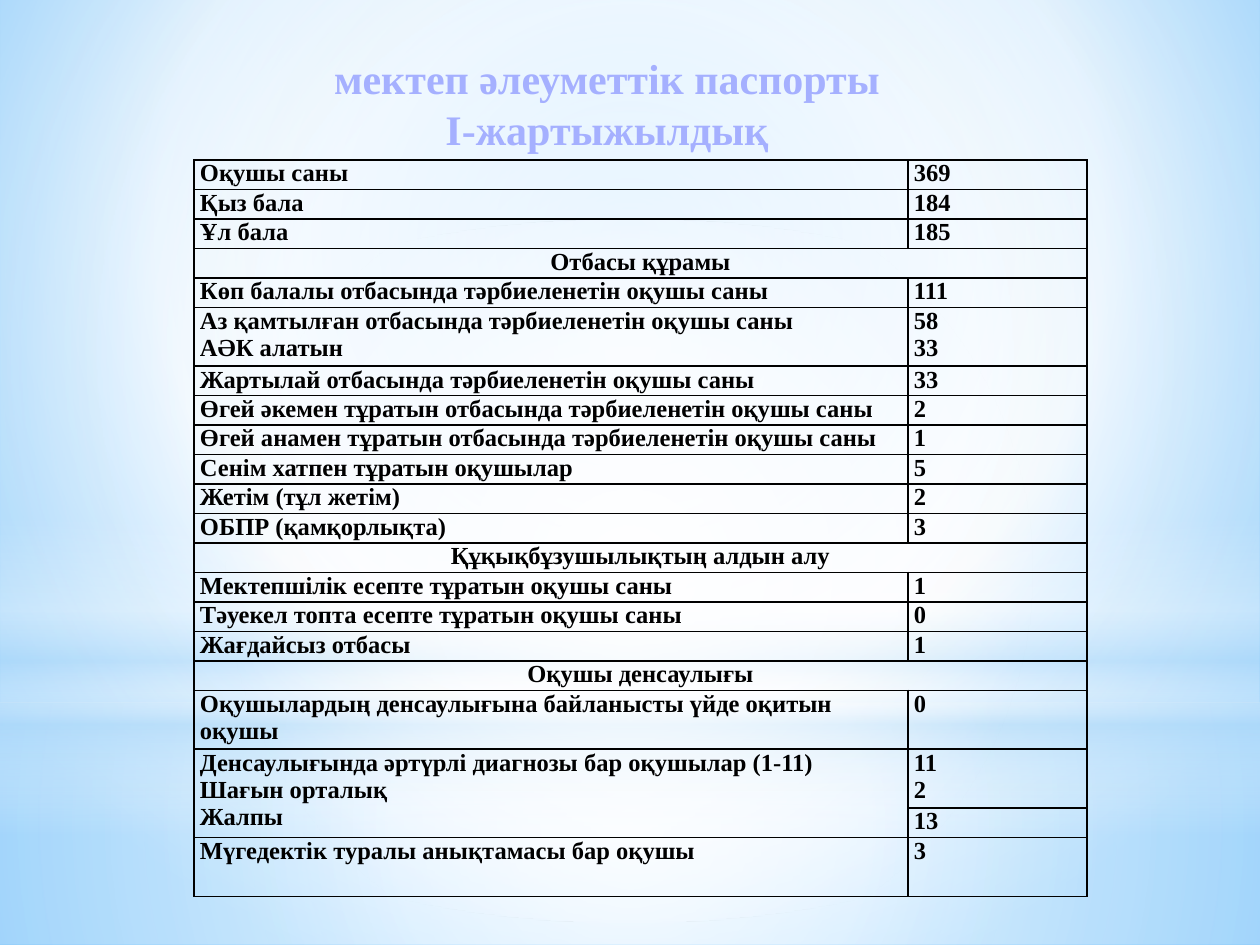
from lxml.etree import SubElement
from pptx import Presentation
from pptx.dml.color import RGBColor
from pptx.enum.shapes import MSO_SHAPE as Shape
from pptx.enum.text import MSO_ANCHOR as Anchor, PP_ALIGN as Align
from pptx.oxml import parse_xml
from pptx.oxml.ns import nsdecls, qn
from pptx.util import Pt

PX = 914400 // 126
FONT = "Times New Roman"
BLACK = RGBColor(0x00, 0x00, 0x00)
WHITE = RGBColor(0xFF, 0xFF, 0xFF)
LILAC = RGBColor(0xA5, 0xB0, 0xFF)
SKY = RGBColor(0x9E, 0xD5, 0xFF)
BLUE = RGBColor(0x5B, 0xB9, 0xFF)
PALE = RGBColor(0xB4, 0xDC, 0xFA)

TITLE = ["мектеп әлеуметтік паспорты", "І-жартыжылдық"]

# Label, value, height in lines. A heading has no value; no label continues the one above.
ROWS = [
    ("Оқушы саны", "369", 1),
    ("Қыз бала", "184", 1),
    ("Ұл бала", "185", 1),
    ("Отбасы құрамы", None, 1),
    ("Көп балалы отбасында тәрбиеленетін оқушы саны", "111", 1),
    ("Аз қамтылған отбасында тәрбиеленетін оқушы саны\nАӘК алатын", "58\n33", 2),
    ("Жартылай отбасында тәрбиеленетін оқушы саны", "33", 1),
    ("Өгей әкемен тұратын отбасында тәрбиеленетін оқушы саны", "2", 1),
    ("Өгей анамен тұратын отбасында тәрбиеленетін оқушы саны", "1", 1),
    ("Сенім хатпен тұратын оқушылар", "5", 1),
    ("Жетім (тұл жетім)", "2", 1),
    ("ОБПР (қамқорлықта)", "3", 1),
    ("Құқықбұзушылықтың алдын алу", None, 1),
    ("Мектепшілік есепте тұратын оқушы саны", "1", 1),
    ("Тәуекел топта есепте тұратын оқушы саны", "0", 1),
    ("Жағдайсыз отбасы", "1", 1),
    ("Оқушы денсаулығы", None, 1),
    ("Оқушылардың денсаулығына байланысты үйде оқитын оқушы", "0", 2),
    ("Денсаулығында әртүрлі диагнозы бар оқушылар (1-11)\nШағын орталық\nЖалпы",
     "11\n2", 2),
    (None, "13", 1),
    ("Мүгедектік туралы анықтамасы бар оқушы", "3", 2),
]
TABLE_LEFT, TABLE_TOP, TABLE_HEIGHT = 194, 160, 736
COLUMN_WIDTHS = [714, 179]

# Gradient stops are position, colour, opacity, the first two in percent of the whole.
CENTRE = (50, 50, 50, 50)
BACKGROUND = [(0, SKY, 100), (60, WHITE, 100), (100, BLUE, 100)]
# Shape, left, top, width, height, stops, centre of a circular gradient (None: downwards)
GLOWS = [
    (Shape.RECTANGLE, 0, 703, 1260, 242,
     [(0, WHITE, 91), (37, WHITE, 76), (100, PALE, 79)], CENTRE),
    (Shape.RECTANGLE, 0, 0, 1260, 703,
     [(0, WHITE, 89), (48, WHITE, 62), (100, PALE, 79)], CENTRE),
    (Shape.RECTANGLE, 0, 519, 1260, 315,
     [(0, WHITE, 0), (29, WHITE, 30), (45, PALE, 40),
      (55, WHITE, 26), (65, PALE, 60), (100, WHITE, 0)], None),
    (Shape.OVAL, 0, 220, 1260, 703, [(0, WHITE, 100), (56, WHITE, 0)], CENTRE),
]


def px(*lengths):
    return [length * PX for length in lengths]


def set_gradient(fill, properties, stops, centre):
    """Fill with a circular gradient around centre (left, top, right, bottom), or downwards."""
    fill.solid()
    stop_xml = "".join(
        f'<a:gs pos="{position * 1000}"><a:srgbClr val="{colour}">'
        f'<a:alpha val="{opacity * 1000}"/></a:srgbClr></a:gs>'
        for position, colour, opacity in stops)
    if centre:
        sides = " ".join(f'{side}="{share * 1000}"' for side, share in zip("ltrb", centre))
        direction = f'<a:path path="circle"><a:fillToRect {sides}/></a:path>'
    else:
        direction = '<a:lin ang="5400000" scaled="0"/>'
    gradient = parse_xml(f'<a:gradFill {nsdecls("a")} rotWithShape="1">'
                         f'<a:gsLst>{stop_xml}</a:gsLst>{direction}</a:gradFill>')
    properties.replace(properties.find(qn("a:solidFill")), gradient)


def style_text(frame, size, colour, alignment):
    for paragraph in frame.paragraphs:
        paragraph.alignment = alignment
        font = paragraph.font
        font.name, font.size, font.bold = FONT, Pt(size), True
        font.color.rgb = colour


def add_borders(cell):
    properties = cell._tc.get_or_add_tcPr()
    for side in ("L", "R", "T", "B"):
        line = SubElement(properties, qn(f"a:ln{side}"), w=str(Pt(1)))
        SubElement(SubElement(line, qn("a:solidFill")), qn("a:srgbClr"), val=str(BLACK))


def add_glows(slide):
    set_gradient(slide.background.fill, slide._element.find(".//" + qn("p:bgPr")),
                 BACKGROUND, (20, 10, 20, 60))
    for kind, left, top, width, height, stops, centre in GLOWS:
        shape = slide.shapes.add_shape(kind, *px(left, top, width, height))
        shape.shadow.inherit = False
        shape.line.fill.background()
        set_gradient(shape.fill, shape._element.spPr, stops, centre)


def add_title(slide):
    frame = slide.shapes.add_textbox(*px(292, 45, 630, 115)).text_frame
    frame.word_wrap = True
    frame.vertical_anchor = Anchor.BOTTOM
    frame.text = "\n".join(TITLE)
    style_text(frame, 24, LILAC, Align.CENTER)


def add_passport_table(slide):
    table = slide.shapes.add_table(
        len(ROWS), 2, *px(TABLE_LEFT, TABLE_TOP, sum(COLUMN_WIDTHS), TABLE_HEIGHT)).table
    table.first_row = table.horz_banding = False
    for column, width in zip(table.columns, px(*COLUMN_WIDTHS)):
        column.width = width
    line_height = TABLE_HEIGHT * PX // sum(lines for _, _, lines in ROWS)

    for index, (label, value, lines) in enumerate(ROWS):
        table.rows[index].height = lines * line_height
        label_cell, value_cell = table.cell(index, 0), table.cell(index, 1)
        if value is None:
            label_cell.merge(value_cell)
        if label is None:
            table.cell(index - 1, 0).merge(label_cell)
        for cell, text in ((label_cell, label), (value_cell, value)):
            cell.margin_left = cell.margin_right = 6 * PX
            cell.margin_top = cell.margin_bottom = 0
            add_borders(cell)
            cell.fill.background()
            if text:
                cell.text = text
            style_text(cell.text_frame, 14, BLACK,
                       Align.CENTER if value is None else Align.LEFT)


def main():
    presentation = Presentation()
    presentation.slide_width, presentation.slide_height = px(1260, 945)
    slide = presentation.slides.add_slide(presentation.slide_layouts[6])
    add_glows(slide)
    add_title(slide)
    add_passport_table(slide)
    presentation.save("out.pptx")


if __name__ == "__main__":
    main()
